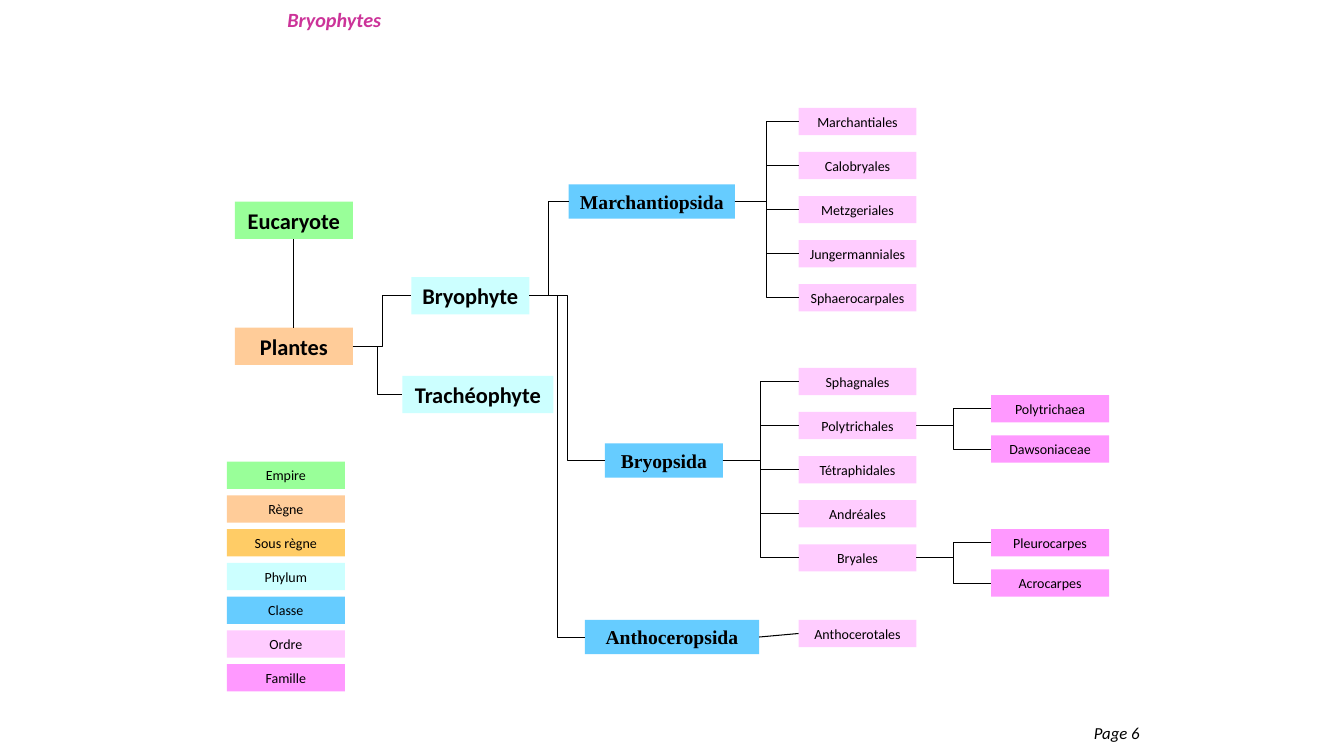
from pptx import Presentation
from pptx.dml.color import RGBColor
from pptx.enum.shapes import MSO_CONNECTOR, MSO_SHAPE
from pptx.enum.text import MSO_ANCHOR, MSO_AUTO_SIZE, PP_ALIGN
from pptx.oxml.ns import qn
from pptx.util import Inches, Pt

RECT = MSO_SHAPE.RECTANGLE
STRAIGHT, ELBOW = MSO_CONNECTOR.STRAIGHT, MSO_CONNECTOR.ELBOW
MIDDLE, NO_FIT = MSO_ANCHOR.MIDDLE, MSO_AUTO_SIZE.NONE
LEFT, CENTER = PP_ALIGN.LEFT, PP_ALIGN.CENTER
TOP_SIDE, LEFT_SIDE, BOTTOM_SIDE, RIGHT_SIDE = range(4)

RANKS = {
    "Empire": "99FF99", "Règne": "FFCC99", "Sous règne": "FFCC66",
    "Phylum": "CCFFFF", "Classe": "66CCFF", "Ordre": "FFCCFF",
    "Famille": "FF99FF",
}
SMALL = {"name": "Calibri", "size": Pt(10)}
HEADING = {"name": "Calibri", "size": Pt(16), "bold": True}
CLASS_FONT = {"name": "Times New Roman", "size": Pt(14), "bold": True}
BOX_W, SMALL_H, HEADING_H, CLASS_H = 1.17, 0.27, 0.37, 0.34
LEGEND_X, LEGEND_Y, LEGEND_STEP = 2.25, 4.58, 0.335
ORDER_X, ORDER_STEP = 7.92, 0.4375
FAMILY_X, FAMILY_STEP = 9.83, 0.4

# name, left, top, width, top of the first order, orders
CLASSES = [
    ("Marchantiopsida", 5.64, 1.83, 1.65, 1.07,
     ["Marchantiales", "Calobryales", "Metzgeriales", "Jungermanniales",
      "Sphaerocarpales"]),
    ("Bryopsida", 6, 4.4, 1.17, 3.65,
     ["Sphagnales", "Polytrichales", "Tétraphidales", "Andréales", "Bryales"]),
    ("Anthoceropsida", 5.8, 6.15, 1.73, 6.15, ["Anthocerotales"]),
]
# order: top of the first family, families
FAMILIES = {
    "Polytrichales": (3.92, ["Polytrichaea", "Dawsoniaceae"]),
    "Bryales": (5.25, ["Pleurocarpes", "Acrocarpes"]),
}


def rgb(color):
    return RGBColor.from_string(color)


def write(tf, text, font, color="000000", align=CENTER):
    tf.auto_size = NO_FIT
    tf.vertical_anchor = MIDDLE
    p = tf.paragraphs[0]
    p.alignment = align
    p.space_before = Pt(0)
    r = p.add_run()
    r.text = text
    r.font.color.rgb = rgb(color)
    for key, value in font.items():
        setattr(r.font, key, value)


def add_box(slide, text, rank, x, y, w=BOX_W, h=SMALL_H, font=SMALL):
    sp = slide.shapes.add_shape(RECT, Inches(x), Inches(y), Inches(w), Inches(h))
    sp.shadow.inherit = False
    sp.fill.solid()
    sp.fill.fore_color.rgb = rgb(RANKS[rank])
    sp.line.fill.background()
    sp.text_frame.word_wrap = False
    write(sp.text_frame, text, font)
    return sp


def join(slide, parent, child, kind=ELBOW, start=RIGHT_SIDE, end=LEFT_SIDE):
    line = slide.shapes.add_connector(kind, 0, 0, 0, 0)
    line.begin_connect(parent, start)
    line.end_connect(child, end)
    line.line.color.rgb = rgb("000000")
    line.line.width = Pt(0.75)
    properties = line._element.spPr
    properties.append(properties.makeelement(qn("a:effectLst"), {}))


def add_title(slide, text):
    title = slide.shapes.title
    title.left, title.top = Inches(2.75), Inches(0.08)
    title.width, title.height = Inches(7.83), Inches(0.25)
    font = {"name": "Calibri", "size": Pt(14.4), "bold": True, "italic": True}
    write(title.text_frame, text, font, "CC3399", LEFT)
    title.text_frame.paragraphs[0].line_spacing = 0.9


def add_page_number(slide, text):
    box = slide.shapes.add_textbox(
        Inches(10.75), Inches(7.12), Inches(0.92), Inches(0.3))
    box.text_frame.word_wrap = True
    font = {"name": "Calibri", "size": Pt(12), "italic": True}
    write(box.text_frame, text, font, align=LEFT)


def add_legend(slide):
    for i, rank in enumerate(RANKS):
        add_box(slide, rank, rank, LEGEND_X, LEGEND_Y + i * LEGEND_STEP)


def add_upper_ranks(slide):
    """Draws empire, kingdom and phyla; returns the phylum that is expanded."""
    def heading(text, rank, x, y, w=BOX_W):
        return add_box(slide, text, rank, x, y, w, HEADING_H, HEADING)

    empire = heading("Eucaryote", "Empire", 2.33, 2)
    kingdom = heading("Plantes", "Règne", 2.33, 3.25)
    bryophyte = heading("Bryophyte", "Phylum", 4.08, 2.75)
    tracheophyte = heading("Trachéophyte", "Phylum", 3.99, 3.73, 1.5)
    join(slide, empire, kingdom, STRAIGHT, BOTTOM_SIDE, TOP_SIDE)
    for phylum in (bryophyte, tracheophyte):
        join(slide, kingdom, phylum)
    return bryophyte


def add_children(slide, parent, names, rank, x, top, step):
    """Draws a column of boxes joined to their parent; returns them by name."""
    kind = ELBOW if len(names) > 1 else STRAIGHT
    boxes = {}
    for i, name in enumerate(names):
        boxes[name] = add_box(slide, name, rank, x, top + i * step)
        join(slide, parent, boxes[name], kind)
    return boxes


def add_classes(slide, phylum):
    for name, x, y, w, top, orders in CLASSES:
        box = add_box(slide, name, "Classe", x, y, w, CLASS_H, CLASS_FONT)
        join(slide, phylum, box)
        order_boxes = add_children(
            slide, box, orders, "Ordre", ORDER_X, top, ORDER_STEP)
        for order, order_box in order_boxes.items():
            if order in FAMILIES:
                first, families = FAMILIES[order]
                add_children(slide, order_box, families, "Famille",
                             FAMILY_X, first, FAMILY_STEP)


def main():
    prs = Presentation()
    prs.slide_width, prs.slide_height = Inches(13.33), Inches(7.5)
    slide = prs.slides.add_slide(prs.slide_layouts.get_by_name("Title Only"))
    add_title(slide, "Bryophytes")
    add_legend(slide)
    add_classes(slide, add_upper_ranks(slide))
    add_page_number(slide, "Page 6")
    prs.save("out.pptx")


if __name__ == "__main__":
    main()
